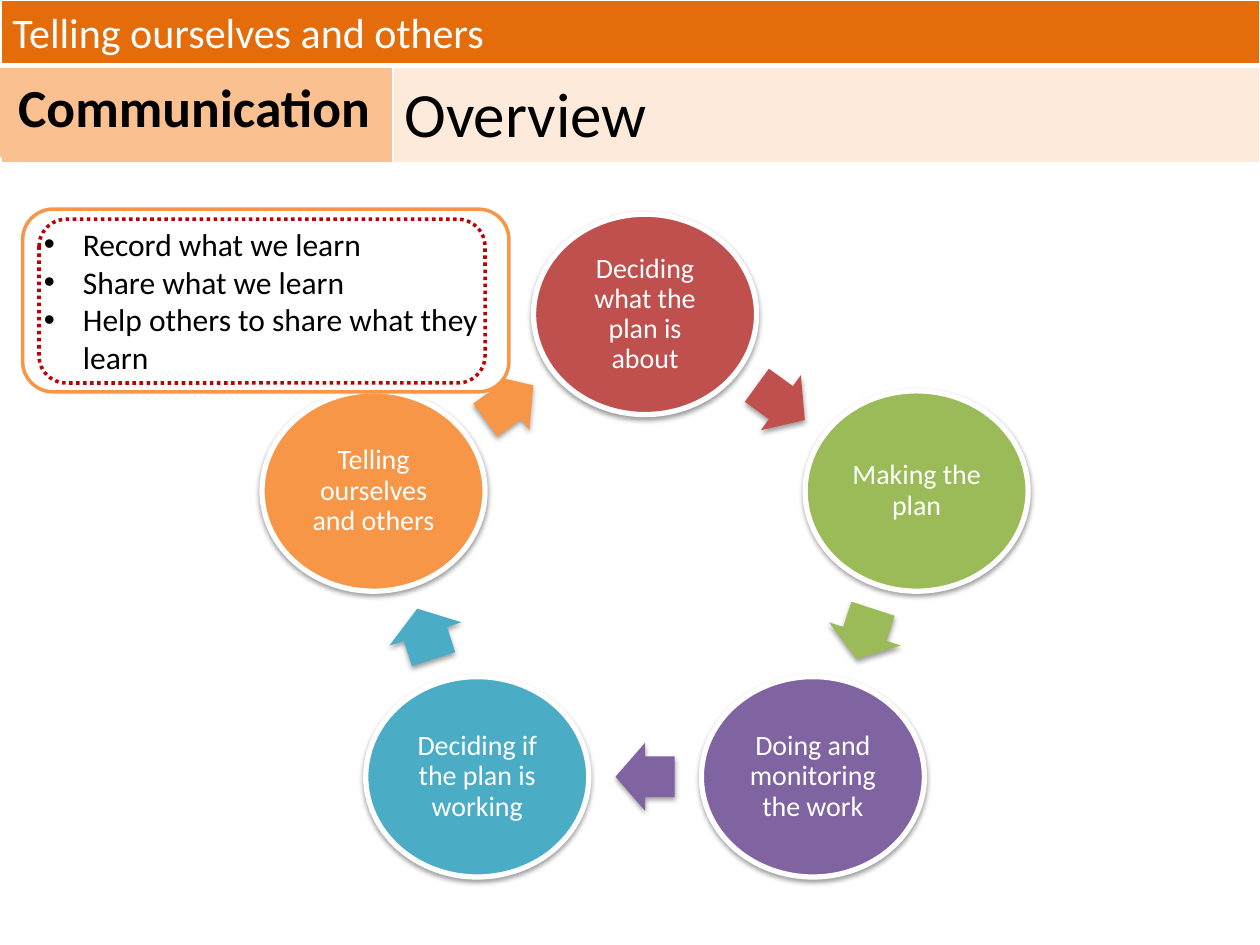
import math

from lxml import etree
from pptx import Presentation
from pptx import util as u
from pptx.dml.color import RGBColor
from pptx.enum import dml, shapes, text
from pptx.oxml import parse_xml
from pptx.oxml.ns import qn

NAMESPACE = 'xmlns:a="http://schemas.openxmlformats.org/drawingml/2006/main"'
KINDS = shapes.MSO_SHAPE
STAGES = [
    ("Deciding what the plan is about", "C0504D"),
    ("Making the plan", "9BBB59"),
    ("Doing and monitoring the work", "8064A2"),
    ("Deciding if the plan is working", "4BACC6"),
    ("Telling ourselves and others", "F79646"),
]
POINTS = ["Record what we learn", "Share what we learn", "Help others to share what they learn"]


def colour(value):
    return RGBColor.from_string(value)


def inches(box):
    return [u.Inches(length) for length in box]


def write(shape, lines, size, ink, align=text.PP_ALIGN.LEFT, anchor=text.MSO_ANCHOR.TOP,
          margins=(0.1, 0.05), bold=False, bulleted=False, spacing=1.0):
    frame = shape.text_frame
    across, down = inches(margins)
    settings = {"word_wrap": True, "auto_size": text.MSO_AUTO_SIZE.NONE, "vertical_anchor": anchor,
                "margin_left": across, "margin_right": across,
                "margin_top": down, "margin_bottom": down}
    for name, value in settings.items():
        setattr(frame, name, value)
    for index, line in enumerate(lines):
        para = frame.paragraphs[0] if index == 0 else frame.add_paragraph()
        para.alignment, para.line_spacing = align, spacing
        if bulleted:
            properties = para._p.get_or_add_pPr()
            indent = u.Inches(0.31)
            properties.set("marL", str(indent))
            properties.set("indent", str(-indent))
            etree.SubElement(properties, qn("a:buFont")).set("typeface", "Arial")
            etree.SubElement(properties, qn("a:buChar")).set("char", "•")
        span = para.add_run()
        span.text = line
        for name, value in {"name": "Calibri", "size": u.Pt(size), "bold": bold}.items():
            setattr(span.font, name, value)
        span.font.color.rgb = colour(ink)


def add_block(page, kind, box, fill=None, line=None, width=2):
    shape = page.shapes.add_shape(kind, *inches(box))
    shape.shadow.inherit = False
    if fill:
        shape.fill.solid()
        shape.fill.fore_color.rgb = colour(fill)
    else:
        shape.fill.background()
    if line:
        shape.line.color.rgb = colour(line)
        shape.line.width = u.Pt(width)
    else:
        shape.line.fill.background()
    return shape


def add_shadow(shape):
    effects = shape._element.spPr.find(qn("a:effectLst"))
    effects.append(parse_xml(
        f'<a:outerShdw {NAMESPACE} blurRad="{u.Pt(3.1)}" dist="{u.Pt(1.6)}" dir="5400000" '
        'rotWithShape="0"><a:srgbClr val="000000"><a:alpha val="38000"/></a:srgbClr></a:outerShdw>'))


def style_cell(cell, fill, bottom=1):
    cell.fill.solid()
    cell.fill.fore_color.rgb = colour(fill)
    properties = cell._tc.get_or_add_tcPr()
    for index, (side, width) in enumerate({"L": 1, "R": 1, "T": 1, "B": bottom}.items()):
        properties.insert(index, parse_xml(
            f'<a:ln{side} {NAMESPACE} w="{u.Pt(width)}"><a:solidFill>'
            f'<a:srgbClr val="FFFFFF"/></a:solidFill></a:ln{side}>'))


def add_header(page, left, top, width):
    """Banner table with the section, topic and title over it."""
    label_width, banner_height, title_height = 3.11, 0.52, 0.77
    holder = page.shapes.add_table(
        2, 2, *inches((left, top, width, banner_height + title_height)))
    table = holder.table
    for column, size in zip(table.columns, (label_width, width - label_width)):
        column.width = u.Inches(size)
    for row, size in zip(table.rows, (banner_height, title_height)):
        row.height = u.Inches(size)
    table.cell(0, 0).merge(table.cell(0, 1))
    for row, column, fill, bottom in ((0, 0, "E46C0A", 3), (0, 1, "E46C0A", 3),
                                      (1, 0, "FAC090", 1), (1, 1, "FDEADA", 1)):
        style_cell(table.cell(row, column), fill, bottom)

    title = page.shapes.title
    title._element.addprevious(holder._element)
    line_top, line_height = top + 0.54, 0.71
    box = inches((left + label_width - 0.01, line_top, width - label_width, line_height))
    title.left, title.top, title.width, title.height = box
    write(title, ["Overview"], 36, "000000")
    section = page.shapes.add_textbox(*inches((left - 0.01, top, width, 0.51)))
    write(section, ["Telling ourselves and others"], 24, "FFFFFF")
    topic = add_block(page, KINDS.RECTANGLE, (left - 0.01, line_top, 3.08, line_height), "FAC090")
    write(topic, ["Communication"], 30.6, "000000", text.PP_ALIGN.CENTER, bold=True)


def add_cycle(page, left, top, width, height):
    """Ring of stages, each followed by an arrow to the next."""
    node_width, node_height = 1.77, 1.59
    step = 2 * math.pi / len(STAGES)
    radius_x = (width - node_width) / 2 / math.sin(step)
    radius_y = (height - node_height) / (1 + math.cos(step / 2))
    middle_x, middle_y = left + width / 2, top + node_height / 2 + radius_y
    centres = [(middle_x + radius_x * math.sin(step * i), middle_y - radius_y * math.cos(step * i))
               for i in range(len(STAGES))]
    for i, (label, fill) in enumerate(STAGES):
        x, y = centres[i]
        node = add_block(page, KINDS.OVAL, (x - node_width / 2, y - node_height / 2,
                                            node_width, node_height), fill, "FFFFFF", 3)
        add_shadow(node)
        write(node, [label], 16, "FFFFFF", text.PP_ALIGN.CENTER, text.MSO_ANCHOR.MIDDLE,
              (0.08, 0.11), spacing=0.9)
        next_x, next_y = centres[(i + 1) % len(STAGES)]
        length, breadth = (0.42, 0.6) if i in (1, 3) else (0.47, 0.54)
        arrow = add_block(page, KINDS.RIGHT_ARROW,
                          ((x + next_x - length) / 2, (y + next_y - breadth) / 2,
                           length, breadth), fill)
        arrow.adjustments[0], arrow.adjustments[1] = 0.6, 0.5
        arrow.rotation = math.degrees(step * (i + 0.5))
        add_shadow(arrow)


def add_callout(page, left, top, width, height):
    panel = add_block(page, KINDS.ROUNDED_RECTANGLE, (left, top, width, height),
                      "FFFFFF", "F79646")
    write(panel, POINTS, 18, "000000", anchor=text.MSO_ANCHOR.MIDDLE, bulleted=True)
    outline = add_block(page, KINDS.ROUNDED_RECTANGLE,
                        (left + 0.13, top + 0.08, width - 0.32, height - 0.15), line="C00000")
    outline.line.dash_style = dml.MSO_LINE.ROUND_DOT


def main():
    deck = Presentation()
    deck.slide_width, deck.slide_height = u.Inches(10), u.Inches(7.5)
    page = deck.slides.add_slide(deck.slide_layouts[5])
    add_header(page, 0.01, 0, 9.99)
    add_cycle(page, 2.08, 1.7, 6.08, 5.26)
    add_callout(page, 0.18, 1.66, 3.86, 1.45)
    deck.save("out.pptx")


if __name__ == "__main__":
    main()
